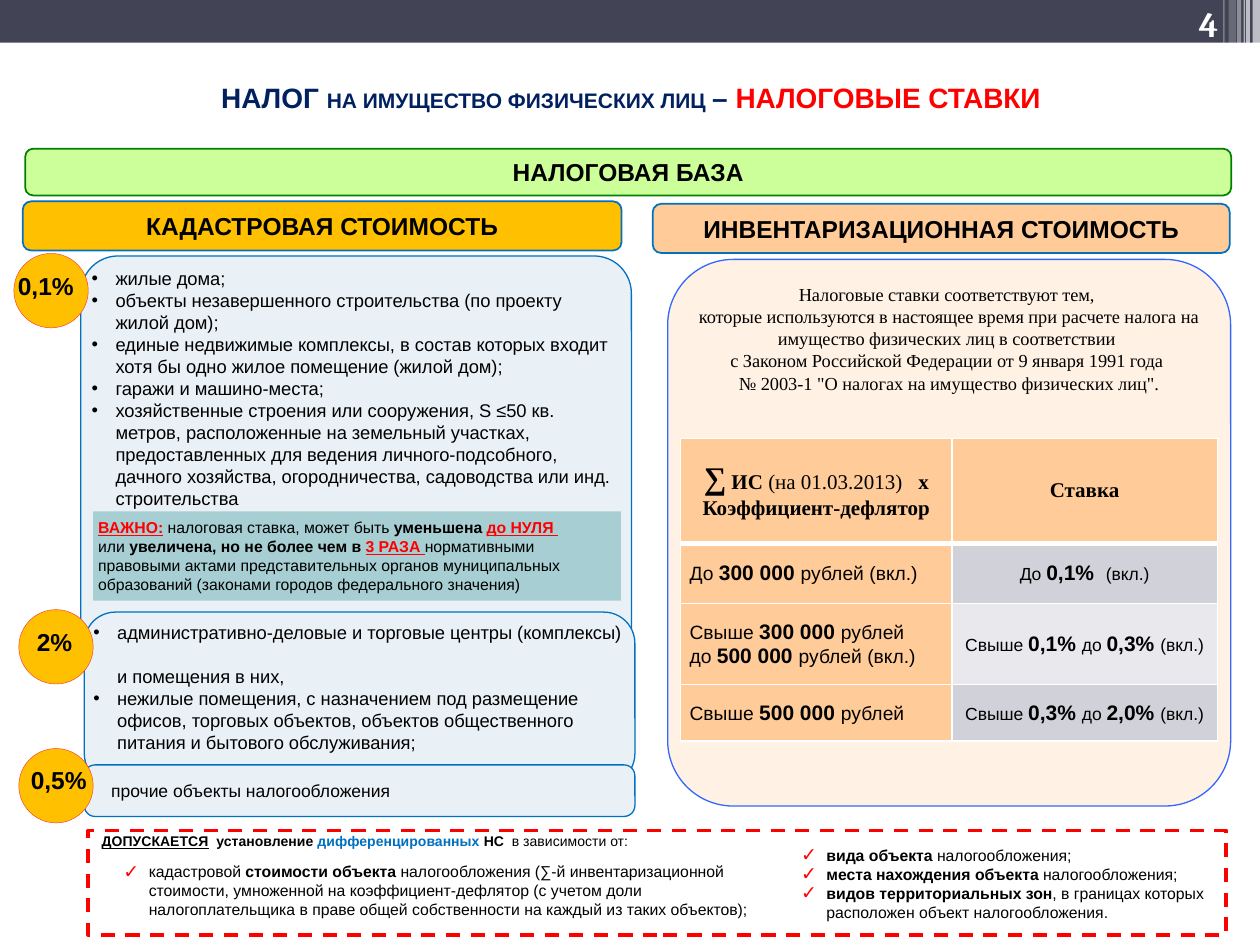
"""Builds a slide on property tax rates for individuals."""
from dataclasses import dataclass
from typing import NamedTuple, Optional

from lxml.etree import SubElement
from pptx import Presentation
from pptx.dml.color import RGBColor
from pptx.enum.dml import MSO_LINE_DASH_STYLE as Dash
from pptx.enum.shapes import MSO_SHAPE as Shape
from pptx.enum.text import MSO_ANCHOR as Anchor, PP_ALIGN as Align
from pptx.oxml.ns import qn
from pptx.util import Cm, Pt

COLORS = {
    "black": "000000", "white": "FFFFFF", "red": "FF0000", "navy": "002060", "blue": "0070C0",
    "band": "424456", "gold": "FFC000", "peach": "FFCC99", "cream": "FFF2E5", "royal": "3366FF",
    "lime": "CCFF99", "green": "008000", "ice": "EAF1F6", "coral": "FC3636", "teal": "A7CFD3",
    "gray": "D1D1DA", "pale": "E9E9ED",
}
SERIF = "Times New Roman"


class Box(NamedTuple):
    left: float
    top: float
    width: float
    height: float


class Span(NamedTuple):
    text: str
    bold: bool = False
    size: Optional[float] = None
    color: Optional[str] = None
    underline: bool = False


class Bullet(NamedTuple):
    char: str
    indent: float
    color: Optional[str] = None
    percent: int = 100


@dataclass
class Text:
    paragraphs: list
    size: float
    align: Align = Align.LEFT
    font: str = "Arial"
    color: str = "black"
    anchor: Anchor = Anchor.TOP
    insets: tuple = (0.25, 0.13)
    bullet: Optional[Bullet] = None
    indent: float = 0
    wrap: bool = True


@dataclass
class Panel:
    box: Box
    fill: Optional[str] = None
    line: Optional[str] = None
    weight: float = 0.75
    text: Optional[Text] = None
    kind: Shape = Shape.ROUNDED_RECTANGLE
    radius: Optional[float] = None


def rgb(name: str) -> RGBColor:
    return RGBColor.from_string(COLORS[name])


def cm(box: Box) -> list:
    return [Cm(length) for length in box]


def add_bullet(paragraph, bullet: Bullet) -> None:
    props = paragraph._p.get_or_add_pPr()
    props.set("marL", str(Cm(bullet.indent)))
    props.set("indent", str(-Cm(bullet.indent)))
    if bullet.color:
        SubElement(SubElement(props, qn("a:buClr")), qn("a:srgbClr"), val=COLORS[bullet.color])
    SubElement(props, qn("a:buSzPct"), val=str(bullet.percent * 1000))
    SubElement(props, qn("a:buFont"), typeface="Arial")
    SubElement(props, qn("a:buChar"), char=bullet.char)


def write(frame, text: Text) -> None:
    frame.word_wrap = text.wrap
    frame.vertical_anchor = text.anchor
    frame.margin_left = frame.margin_right = Cm(text.insets[0])
    frame.margin_top = frame.margin_bottom = Cm(text.insets[1])
    for index, spans in enumerate(text.paragraphs):
        paragraph = frame.add_paragraph() if index else frame.paragraphs[0]
        paragraph.alignment = text.align
        paragraph.space_before = Pt(0)
        if text.bullet:
            add_bullet(paragraph, text.bullet)
        elif text.indent:
            paragraph._p.get_or_add_pPr().set("marL", str(Cm(text.indent)))
        for span in spans:
            for number, piece in enumerate(span.text.split("\n")):
                if number:
                    paragraph.add_line_break()
                    SubElement(paragraph._p[-1], qn("a:rPr"), sz=str(int(text.size * 100)))
                if piece:
                    run = paragraph.add_run()
                    run.text = piece
                    run.font.name = text.font
                    run.font.size = Pt(span.size or text.size)
                    run.font.bold = span.bold
                    run.font.underline = span.underline
                    run.font.color.rgb = rgb(span.color or text.color)


def add_panel(slide, panel: Panel):
    shape = slide.shapes.add_shape(panel.kind, *cm(panel.box))
    shape.shadow.inherit = False
    if panel.radius is not None:
        shape.adjustments[0] = panel.radius
    if panel.fill:
        shape.fill.solid()
        shape.fill.fore_color.rgb = rgb(panel.fill)
    else:
        shape.fill.background()
    if panel.line:
        shape.line.color.rgb = rgb(panel.line)
        shape.line.width = Pt(panel.weight)
    else:
        shape.line.fill.background()
    if panel.text:
        write(shape.text_frame, panel.text)
    return shape


def add_text(slide, box: Box, text: Text) -> None:
    write(slide.shapes.add_textbox(*cm(box)).text_frame, text)


def add_rate(slide, circle: Box, label: Box, rate: str) -> None:
    add_panel(slide, Panel(circle, "gold", "coral", 0.25, kind=Shape.OVAL))
    add_text(slide, label, Text([[Span(rate, True)]], 14, Align.CENTER, wrap=False))


def add_header_band(slide) -> None:
    add_panel(slide, Panel(Box(0, 0, 25.4, 0.86), "band", kind=Shape.RECTANGLE))
    stripes = [(25.25, 0.15, 1.73, 65), (25.12, 0.08, 1.73, 65), (25.07, 0.03, 1.73, 60),
               (24.94, 0.08, 1.73, 40), (24.77, 0.15, 1.63, 20), (24.66, 0.03, 1.63, 30)]
    for left, width, height, opacity in stripes:
        stripe = add_panel(slide, Panel(Box(left, 0, width, height), "white", kind=Shape.RECTANGLE))
        tint = stripe._element.spPr.find(qn("a:solidFill"))[0]
        SubElement(tint, qn("a:alpha"), val=str(opacity * 1000))


def add_border(cell, side: str, weight: float) -> None:
    border = SubElement(cell._tc.get_or_add_tcPr(), qn(f"a:{side}"), w=str(Pt(weight)))
    SubElement(SubElement(border, qn("a:solidFill")), qn("a:srgbClr"), val=COLORS["white"])


def add_rate_table(slide) -> None:
    def bold(words: str) -> Span:
        return Span(words, True, 12)

    rows = [
        ([[Span("∑", True, 18), bold(" ИС "), Span("(на 01.03.2013)   "), bold("х Коэффициент-дефлятор")]],
         [bold("Ставка")]),
        ([[Span("До "), bold("300 000 "), Span("рублей (вкл.)")]],
         [Span("До "), bold("0,1%  "), Span("(вкл.)")]),
        ([[Span("Свыше "), bold("300 000 "), Span("рублей")],
          [Span("до "), bold("500 000 "), Span("рублей (вкл.)")]],
         [Span("Свыше "), bold("0,1% "), Span("до "), bold("0,3% "), Span("(вкл.)")]),
        ([[Span("Свыше "), bold("500 000 "), Span("рублей")]],
         [Span("Свыше "), bold("0,3% "), Span("до "), bold("2,0% "), Span("(вкл.)")]),
    ]
    table = slide.shapes.add_table(4, 2, *cm(Box(13.72, 8.84, 10.82, 6.1))).table
    for column, width in zip(table.columns, (5.47, 5.35)):
        column.width = Cm(width)
    for index, (height, (amount, rate)) in enumerate(zip((2.11, 1.22, 1.63, 1.14), rows)):
        table.rows[index].height = Cm(height)
        rate_fill = ("peach", "gray", "pale", "gray")[index]
        head = index == 0
        font = SERIF if head else "Arial"
        texts = (Text(amount, 12 if head else 11, Align.CENTER if head else Align.LEFT, font),
                 Text([rate], 10, Align.CENTER, font))
        for cell, text, fill in zip(table.rows[index].cells, texts, ("peach", rate_fill)):
            write(cell.text_frame, text)
            cell.vertical_anchor = Anchor.MIDDLE
            cell.margin_left = cell.margin_right = Cm(0.18)
            cell.margin_top = cell.margin_bottom = 0
            for side in ("lnL", "lnR", "lnT", "lnB"):
                thick = (head and side == "lnB") or (index == 1 and side == "lnT")
                add_border(cell, side, 3 if thick else 1)
            cell.fill.solid()
            cell.fill.fore_color.rgb = rgb(fill)


def main() -> None:
    deck = Presentation()
    deck.slide_width, deck.slide_height = Cm(25.4), Cm(19.05)
    slide = deck.slides.add_slide(deck.slide_layouts[5])
    add_header_band(slide)
    title = slide.shapes.title
    title.left, title.top, title.width, title.height = cm(Box(0.58, 1.52, 24.28, 1.12))
    write(title.text_frame, Text([[
        Span("НАЛОГ ", True), Span("НА ИМУЩЕСТВО ФИЗИЧЕСКИХ ЛИЦ ", True, 12), Span("– ", True),
        Span("НАЛОГОВЫЕ СТАВКИ", True, color="red")]], 16, Align.CENTER, color="navy", insets=(0.1, 0.1)))

    headings = [("НАЛОГОВАЯ БАЗА", Box(0.51, 3, 24.31, 0.94), "lime", "green"),
                ("КАДАСТРОВАЯ СТОИМОСТЬ", Box(0.46, 4.06, 12.07, 0.99), "gold", "blue"),
                ("ИНВЕНТАРИЗАЦИОННАЯ СТОИМОСТЬ", Box(13.16, 4.11, 11.63, 0.99), "peach", "blue")]
    for words, box, fill, line in headings:
        heading = Text([[Span(words, True)]], 14, Align.CENTER, anchor=Anchor.MIDDLE)
        add_panel(slide, Panel(box, fill, line, 1, heading))

    dot = Bullet("•", 0.48)
    housing = [
        "жилые дома;", "объекты незавершенного строительства (по проекту жилой дом);",
        "единые недвижимые комплексы, в состав которых входит хотя бы одно жилое помещение (жилой дом);",
        "гаражи и машино-места;",
        "хозяйственные строения или сооружения, S ≤50 кв. метров, расположенные на земельный участках, "
        "предоставленных для ведения личного-подсобного, дачного хозяйства, огородничества, "
        "садоводства или инд. строительства"]
    business = [
        "административно-деловые и торговые центры (комплексы) \nи помещения в них,",
        "нежилые помещения, с назначением под размещение офисов, торговых объектов, "
        "объектов общественного питания и бытового обслуживания;"]
    other = Text([[Span("прочие объекты налогообложения")]], 10, anchor=Anchor.MIDDLE,
                 insets=(0, 0), indent=0.48)
    groups = [
        (Box(1.63, 5.16, 11.1, 8.38), 0.09, Text([[Span(i)] for i in housing], 10.5, insets=(0, 0), bullet=dot),
         "0,1%", Box(0.28, 5.11, 1.5, 1.5), Box(0.1, 5.33, 1.65, 0.86)),
        (Box(1.7, 12.34, 11.1, 3.48), 0.18, Text([[Span(i)] for i in business], 10.5, insets=(0, 0), bullet=dot),
         "2%", Box(0.38, 12.29, 1.5, 1.5), Box(0.48, 12.52, 1.24, 0.86)),
        (Box(1.7, 15.42, 11.1, 1.04), 0.21, other,
         "0,5%", Box(0.38, 15.09, 1.5, 1.5), Box(0.36, 15.29, 1.65, 0.86)),
    ]
    for box, radius, objects, rate, circle, label in groups:
        add_panel(slide, Panel(box, "ice", "blue", text=objects, radius=radius))
        add_rate(slide, circle, label, rate)

    important = [
        Span("ВАЖНО:", True, color="red", underline=True), Span(" налоговая ставка, может быть "),
        Span("уменьшена ", True), Span("до НУЛЯ \n", True, color="red", underline=True), Span("или"),
        Span(" увеличена, но не более чем в ", True), Span("3 РАЗА ", True, color="red", underline=True),
        Span("нормативными правовыми актами представительных органов муниципальных образований "
             "(законами городов федерального значения)")]
    add_panel(slide, Panel(Box(1.88, 10.31, 10.64, 1.8), "teal", kind=Shape.RECTANGLE,
                           text=Text([important], 9, insets=(0.1, 0.13))))

    law = ("Налоговые ставки соответствуют тем, \nкоторые используются в настоящее время при расчете "
           "налога на имущество физических лиц в соответствии \nс Законом Российской Федерации "
           "от 9 января 1991 года \n№ 2003-1 \"О налогах на имущество физических лиц\".")
    add_panel(slide, Panel(Box(13.46, 5.23, 11.35, 11.02), "cream", "royal", radius=0.12,
                           text=Text([[Span(law)]], 10.5, Align.CENTER, SERIF, insets=(0, 0.1))))
    add_rate_table(slide)

    frame = add_panel(slide, Panel(Box(1.78, 16.74, 22.94, 2.11), None, "red", 2, kind=Shape.RECTANGLE))
    frame.line.dash_style = Dash.DASH
    add_text(slide, Box(1.8, 16.66, 22.5, 0.61), Text([[
        Span("ДОПУСКАЕТСЯ", True, underline=True), Span("  установление ", True),
        Span("дифференцированных ", True, color="blue"), Span("НС  ", True), Span("в зависимости от:")]], 8))
    check = Bullet("✓", 0.51, "red", 120)
    add_text(slide, Box(2.24, 17.25, 13.74, 1.42), Text([[
        Span("кадастровой "), Span("стоимости объекта", True),
        Span(" налогообложения (∑-й инвентаризационной стоимости, умноженной на коэффициент-дефлятор "
             "(с учетом доли налогоплательщика в праве общей собственности на каждый из таких объектов);")
    ]], 9, bullet=check))
    add_text(slide, Box(15.9, 16.92, 8.71, 1.8), Text([
        [Span("вида объекта", True), Span(" налогообложения;")],
        [Span("места нахождения объекта", True), Span(" налогообложения;")],
        [Span("видов территориальных зон", True),
         Span(", в границах которых расположен объект налогообложения.")]], 9, bullet=check))
    add_text(slide, Box(21.89, 0, 2.92, 1.02), Text(
        [[Span("4", True)]], 20, Align.RIGHT, "Cambria", "white", Anchor.BOTTOM))
    deck.save("out.pptx")


if __name__ == "__main__":
    main()
